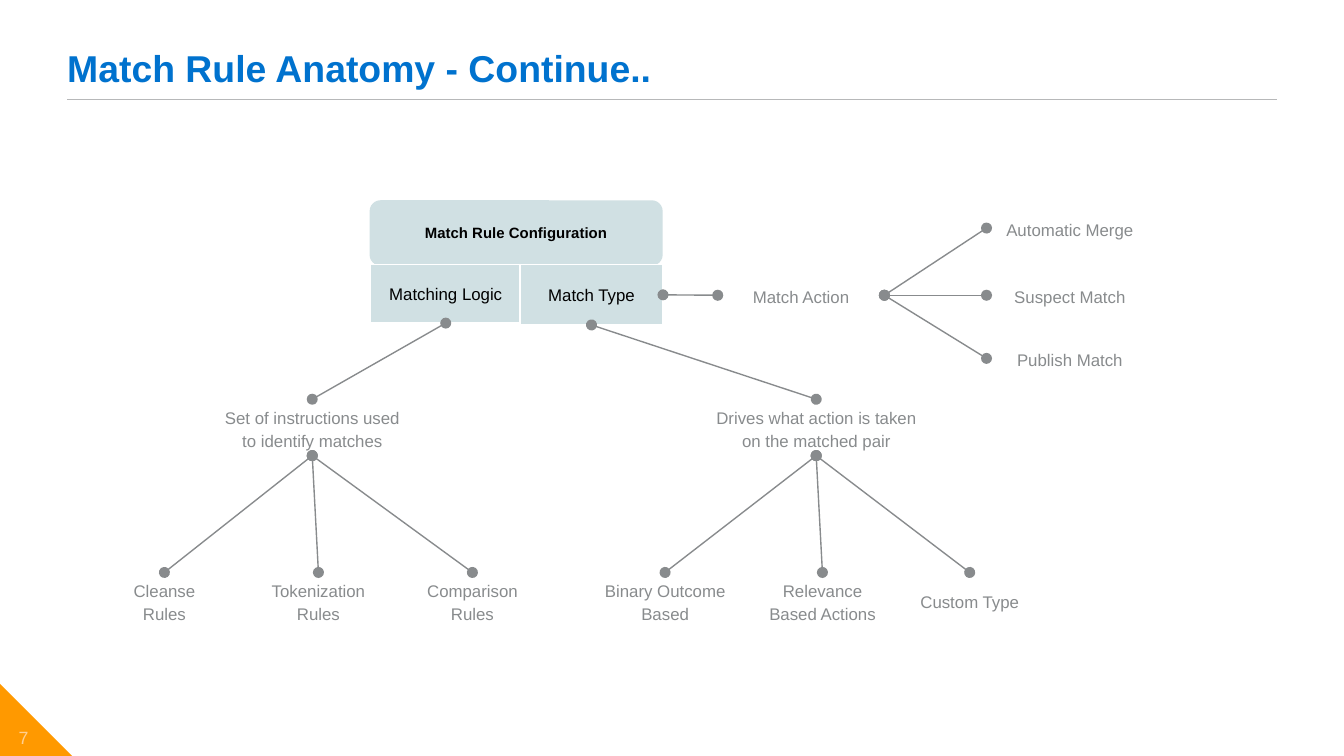
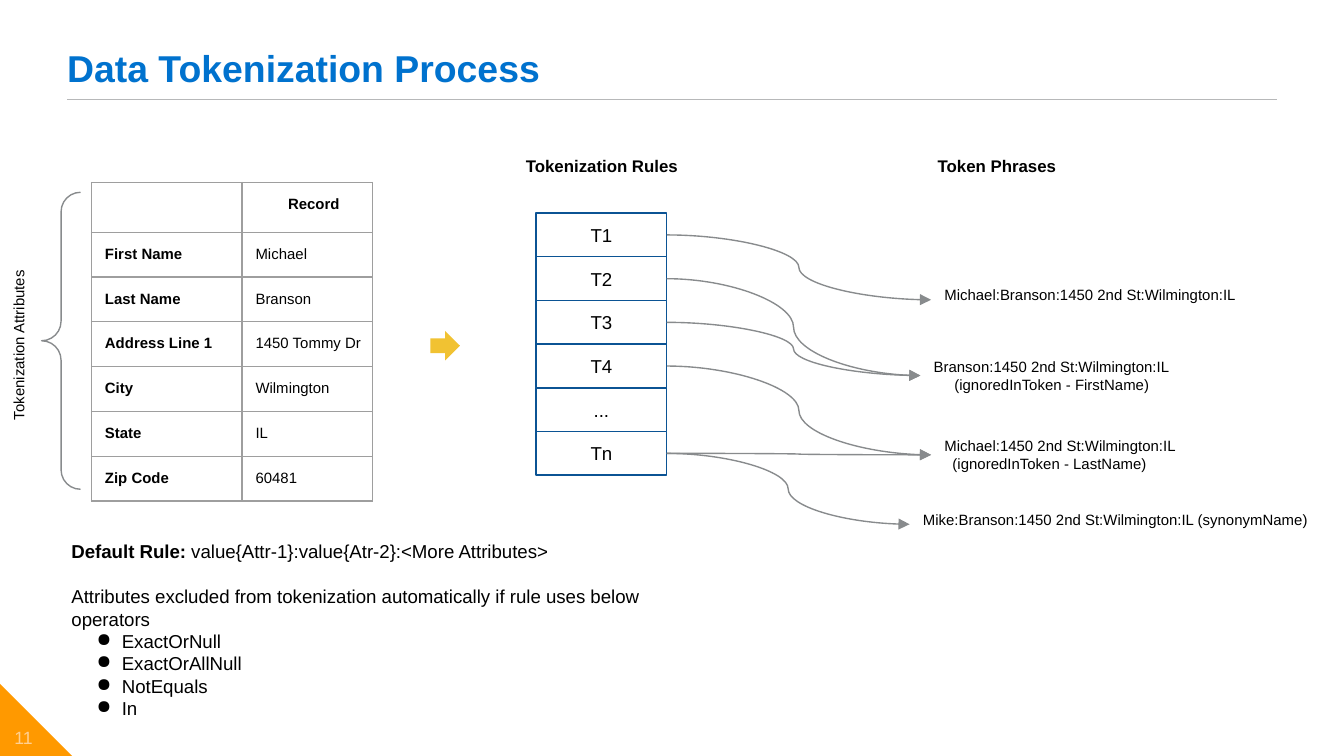
from dataclasses import dataclass
from typing import NamedTuple

from lxml.etree import SubElement
from pptx import Presentation
from pptx.dml.color import RGBColor
from pptx.enum.shapes import MSO_CONNECTOR, MSO_SHAPE
from pptx.enum.text import MSO_ANCHOR, PP_ALIGN
from pptx.oxml.ns import qn
from pptx.util import Pt

TOP, LEFT, BOTTOM, RIGHT = range(4)  # connection sites of a rectangle


class Box(NamedTuple):
    left: float
    top: float
    width: float
    height: float

    def inner(self, left, top, width, height):
        """Return a box whose place is counted from this box's corner."""
        return Box(self.left + left, self.top + top, width, height)

    def points(self):
        return [Pt(value) for value in self]


@dataclass(frozen=True)
class Style:
    size: float
    color: str
    bold: bool = False
    align: PP_ALIGN = PP_ALIGN.LEFT
    anchor: MSO_ANCHOR = MSO_ANCHOR.TOP
    spacing: float = 1.0
    inset: float = 7.2


@dataclass(frozen=True)
class Theme:
    font = "Arial"
    white = "FFFFFF"
    black = "000000"
    gray = "888B8D"
    rule_line = "B7B8B9"
    accent = "FF9900"
    panel = "D0E0E3"
    token_line = "0B5394"
    arrow = "F1C232"
    grid = "9E9E9E"
    line_width = 0.75
    title = Style(20, "0072CE", True, anchor=MSO_ANCHOR.BOTTOM, spacing=0.9, inset=0)
    number = Style(9.5, "FFD092", False, PP_ALIGN.CENTER, MSO_ANCHOR.MIDDLE, 0.9, 0)
    node = Style(9, gray, False, PP_ALIGN.CENTER, MSO_ANCHOR.MIDDLE, 1.15)
    panel_head = Style(8, black, True, PP_ALIGN.CENTER, MSO_ANCHOR.MIDDLE)
    panel_part = Style(9, black, False, PP_ALIGN.CENTER, MSO_ANCHOR.MIDDLE)
    token = Style(10, black, False, PP_ALIGN.CENTER, MSO_ANCHOR.MIDDLE)
    heading = Style(9, black, True)
    heading_centered = Style(9, black, True, PP_ALIGN.CENTER)
    small = Style(8, black)
    small_bold = Style(8, black, True)
    small_centered = Style(8, black, False, PP_ALIGN.CENTER)
    body = Style(10, black)


THEME = Theme()


def rgb(color):
    return RGBColor.from_string(color)


def format_paragraph(para, style):
    para.alignment = style.align
    para.line_spacing = style.spacing
    for span in para.runs:
        span.font.name = THEME.font
        span.font.size = Pt(style.size)
        span.font.bold = style.bold
        span.font.color.rgb = rgb(style.color)


def fill_text(shape, text, style):
    frame = shape.text_frame
    frame.word_wrap = True
    frame.vertical_anchor = style.anchor
    frame.margin_left = frame.margin_right = Pt(style.inset)
    frame.margin_top = frame.margin_bottom = Pt(style.inset)
    frame.text = text
    for para in frame.paragraphs:
        format_paragraph(para, style)


def add_text(shapes, box, text, style):
    shape = shapes.add_textbox(*box.points())
    fill_text(shape, text, style)
    return shape


def add_figure(shapes, kind, box, fill=None, line=None):
    shape = shapes.add_shape(kind, *box.points())
    shape.shadow.inherit = False
    if fill:
        shape.fill.solid()
        shape.fill.fore_color.rgb = rgb(fill)
    else:
        shape.fill.background()
    if line:
        shape.line.color.rgb = rgb(line)
        shape.line.width = Pt(THEME.line_width)
    else:
        shape.line.fill.background()
    return shape


def add_line(page, kind, start=(0, 0), end=(0, 0), color=THEME.gray, **ends):
    """Draw a connector; ends maps headEnd and tailEnd to arrowhead types."""
    line = page.shapes.add_connector(kind, *[Pt(value) for value in (*start, *end)])
    line.line.color.rgb = rgb(color)
    line.line.width = Pt(THEME.line_width)
    properties = line.element.spPr
    for tag, head in ends.items():
        SubElement(properties.find(qn("a:ln")), qn(f"a:{tag}"), type=head)
    SubElement(properties, qn("a:effectLst"))
    return line


def join(page, source, source_site, target, target_site):
    line = add_line(page, MSO_CONNECTOR.STRAIGHT, headEnd="oval", tailEnd="oval")
    line.begin_connect(source, source_site)
    line.end_connect(target, target_site)


def set_indent(para, left, first=0):
    properties = para._p.get_or_add_pPr()
    properties.set("marL", str(Pt(left)))
    properties.set("indent", str(Pt(first)))
    return properties


def start_page(deck, title, number):
    page = deck.slides.add_slide(deck.slide_layouts[6])
    add_figure(page.shapes, MSO_SHAPE.RIGHT_TRIANGLE, Box(0, 366.4, 38.6, 38.6), THEME.accent)
    add_line(page, MSO_CONNECTOR.STRAIGHT, (36, 53.3), (684, 53.3), THEME.rule_line)
    add_text(page.shapes, Box(0, 385.2, 25.2, 21.6), str(number), THEME.number)
    add_text(page.shapes, Box(36, 8, 648, 40.3), title, THEME.title)
    return page


def add_configuration(page, box):
    """Draw the panel and return its two lower parts."""
    shapes = page.shapes.add_group_shape().shapes
    head = add_figure(shapes, MSO_SHAPE.FLOWCHART_ALTERNATE_PROCESS,
                      box.inner(0, 0, box.width, 35), THEME.panel)
    fill_text(head, "Match Rule Configuration", THEME.panel_head)
    parts = []
    for text, left, width, height in (("Matching Logic", 0.6, 80.4, 31.3),
                                      ("Match Type", 80.6, 76.6, 32.3)):
        part = add_figure(shapes, MSO_SHAPE.RECTANGLE, box.inner(left, 34.5, width, height),
                          THEME.panel, THEME.white)
        fill_text(part, text, THEME.panel_part)
        parts.append(part)
    return parts


def add_branch(page, box, parent, topic, topic_place, leaves, step):
    """Hang a topic under its parent, with a row of (text, width) leaves below it."""
    topic_left, topic_width = topic_place
    topic_box = add_text(page.shapes, box.inner(topic_left, 0, topic_width, 30.2),
                         topic, THEME.node)
    join(page, parent, BOTTOM, topic_box, TOP)
    for index, (text, width) in enumerate(leaves):
        leaf = add_text(page.shapes, box.inner(index * step, box.height - 30.2, width, 30.2),
                        text, THEME.node)
        join(page, topic_box, BOTTOM, leaf, TOP)


def add_actions(page, box, parent):
    action = add_text(page.shapes, box.inner(0, 36, 89.3, 30.2), "Match Action", THEME.node)
    join(page, parent, RIGHT, action, LEFT)
    for text, top in (("Automatic Merge", 0), ("Suspect Match", 36), ("Publish Match", 69.8)):
        result = add_text(page.shapes, box.inner(144, top, 89.3, 30.2), text, THEME.node)
        join(page, action, RIGHT, result, LEFT)


def build_anatomy(deck):
    page = start_page(deck, "Match Rule Anatomy - Continue..", 7)
    logic, match_type = add_configuration(page, Box(198, 107.3, 157, 67))
    add_branch(page, Box(53.2, 213.9, 235, 123), logic,
               "Set of instructions used to identify matches", (59, 110.2),
               [("Cleanse Rules", 69.8), ("Tokenization Rules", 69.8),
                ("Comparison Rules", 69.8)], 82.5)
    add_branch(page, Box(316, 213.9, 238, 123), match_type,
               "Drives what action is taken on the matched pair", (60.4, 121.7),
               [("Binary Outcome Based", 80.6), ("Relevance Based Actions", 80.6),
                ("Custom Type", 69.8)], 84.3)
    add_actions(page, Box(384.5, 107.1, 233.3, 100), match_type)


def format_cell(cell, text, style):
    properties = cell._tc.get_or_add_tcPr()
    for tag in ("lnL", "lnR", "lnT", "lnB"):
        edge = SubElement(properties, qn(f"a:{tag}"), w=str(Pt(THEME.line_width)))
        SubElement(SubElement(edge, qn("a:solidFill")), qn("a:srgbClr"), val=THEME.grid)
    cell.fill.solid()
    cell.fill.fore_color.rgb = rgb(THEME.white)
    cell.margin_left = Pt(7.2)
    cell.margin_right = 0
    cell.margin_top = cell.margin_bottom = Pt(7.2 if text else 0)
    if text:
        cell.text_frame.text = text
        format_paragraph(cell.text_frame.paragraphs[0], style)


def add_record(page, box):
    """Draw the record table with the brace and turned label at its left."""
    add_figure(page.shapes, MSO_SHAPE.DOUBLE_BRACE, box.inner(-26.7, 5.3, 125.3, 159.1),
               line=THEME.gray)
    label = add_text(page.shapes, box.inner(-90.8, 75, 108.7, 24.5),
                     "Tokenization Attributes", THEME.small_centered)
    label.rotation = 270
    rows = [("", "Record"), ("First Name", "Michael"), ("Last Name", "Branson"),
            ("Address Line 1", "1450 Tommy Dr"), ("City", "Wilmington"),
            ("State", "IL"), ("Zip Code", "60481")]
    table = page.shapes.add_table(len(rows), 2, *box.points()).table
    table.first_row = table.horz_banding = False
    for column, width in zip(table.columns, (80.7, 69.7)):
        column.width = Pt(width)
    for index, values in enumerate(rows):
        table.rows[index].height = Pt(23.93 if index else 26.7)
        for column, text in enumerate(values):
            style = THEME.small if index and column else THEME.small_bold
            format_cell(table.cell(index, column), text, style)
    table.cell(0, 1).text_frame.paragraphs[0].alignment = PP_ALIGN.CENTER


def add_token_rules(page, box):
    """Stack the rules and return their boxes by name."""
    add_text(page.shapes, box.inner(-16.6, -36.4, 103.7, 25.2), "Tokenization Rules",
             THEME.heading_centered)
    names = ["T1", "T2", "T3", "T4", "...", "Tn"]
    height = box.height / len(names)
    rules = {}
    for index, name in enumerate(names):
        rules[name] = add_figure(page.shapes, MSO_SHAPE.RECTANGLE,
                                 box.inner(0, index * height, box.width, height),
                                 THEME.white, THEME.token_line)
        fill_text(rules[name], name, THEME.token)
    return rules


def add_phrases(page, box, rules):
    """List the token phrases, each reached by arrows from its rules."""
    add_text(page.shapes, box.inner(8, 0, 84.2, 25.2), "Token Phrases", THEME.heading)
    phrases = [
        (11.5, 70.6, 172.8, 0, ["T1"], "Michael:Branson:1450 2nd St:Wilmington:IL"),
        (5.8, 106.5, 172.8, 11.1, ["T2", "T3"],
         "Branson:1450 2nd St:Wilmington:IL\n(ignoredInToken - FirstName)"),
        (11.5, 149, 172.8, 4.4, ["T4", "Tn"],
         "Michael:1450 2nd St:Wilmington:IL\n(ignoredInToken - LastName)"),
        (0, 190.8, 232.5, 0, ["Tn"], "Mike:Branson:1450 2nd St:Wilmington:IL (synonymName)"),
    ]
    for left, top, width, indent, sources, text in phrases:
        height = 33.8 if "\n" in text else 24.5
        phrase = add_text(page.shapes, box.inner(left, top, width, height), text, THEME.small)
        for para in phrase.text_frame.paragraphs[1:]:
            set_indent(para, indent)
        for name in sources:
            line = add_line(page, MSO_CONNECTOR.CURVE, tailEnd="triangle")
            line.begin_connect(rules[name], RIGHT)
            line.end_connect(phrase, LEFT)


def add_default_rule(page, box):
    lead = "Default Rule:"
    operators = ["ExactOrNull", "ExactOrAllNull", "NotEquals", "In"]
    note = "Attributes excluded from tokenization automatically if rule uses below operators"
    shape = add_text(page.shapes, box, "\n".join([lead, note, *operators]), THEME.body)
    first, second, *bullets = shape.text_frame.paragraphs
    first.add_run().text = " value{Attr-1}:value{Atr-2}:<More Attributes>"
    format_paragraph(first, THEME.body)
    first.runs[0].font.bold = True
    second.space_before = Pt(12)
    for para in bullets:
        properties = set_indent(para, 27, -13.5)
        color = SubElement(properties, qn("a:buClr"))
        SubElement(color, qn("a:srgbClr"), val=THEME.black)
        SubElement(properties, qn("a:buChar"), char="●")


def build_tokenization(deck):
    page = start_page(deck, "Data Tokenization Process", 11)
    add_record(page, Box(49, 97.7, 150.4, 170.3))
    add_figure(page.shapes, MSO_SHAPE.RIGHT_ARROW, Box(230.6, 177.3, 15.8, 15.8), THEME.arrow)
    rules = add_token_rules(page, Box(287.2, 114.2, 70, 140.4))
    add_phrases(page, Box(487.3, 77.8, 232.5, 215.3), rules)
    add_default_rule(page, Box(31.2, 282.2, 343.4, 111.6))


def main():
    deck = Presentation()
    deck.slide_width, deck.slide_height = Pt(720), Pt(405)
    build_anatomy(deck)
    build_tokenization(deck)
    deck.save("out.pptx")


if __name__ == "__main__":
    main()
